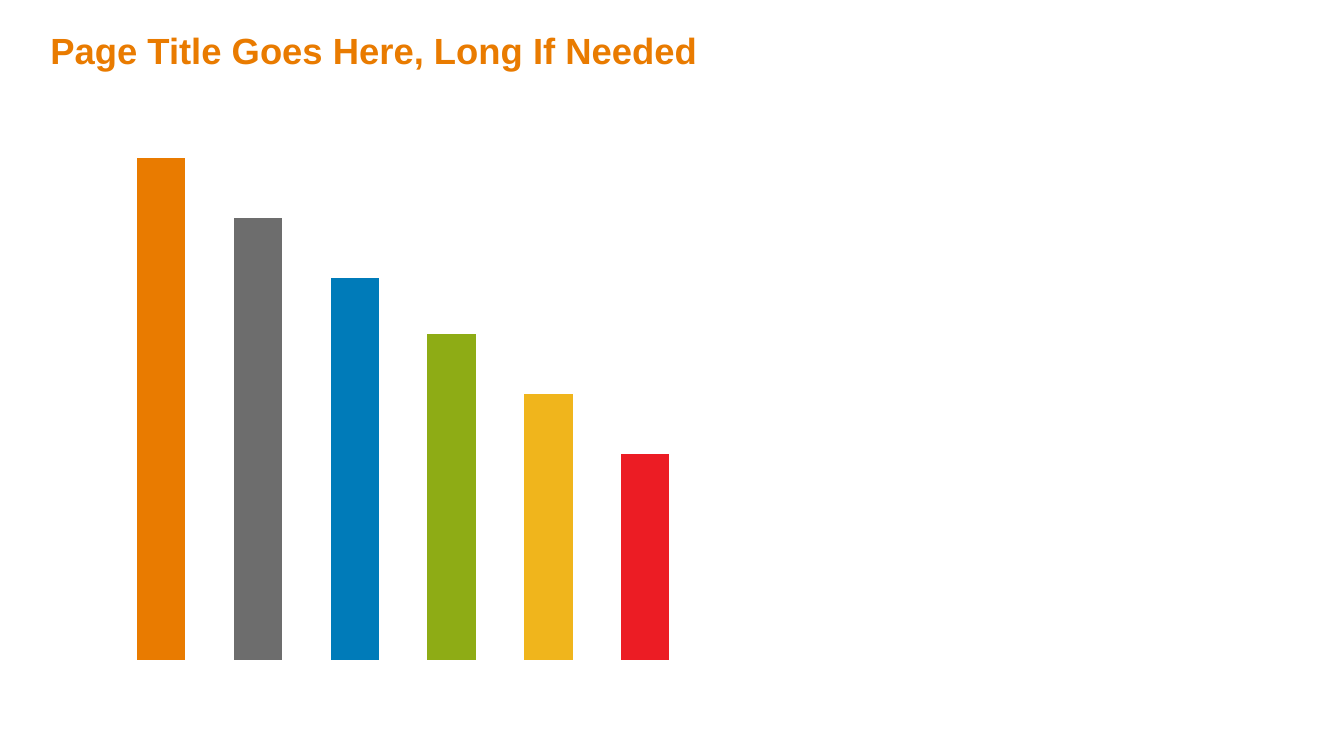
import pptx
import pptx.chart.data
import pptx.dml.color
import pptx.enum.chart
import pptx.enum.text
import pptx.oxml
import pptx.oxml.ns
import pptx.util

Inches = pptx.util.Inches
FONT = "Arial"
ORANGE = "E97B00"
SERIES = [
    (100, ORANGE),
    (88, "6D6D6D"),
    (76, "007BB9"),
    (65, "8EAC15"),
    (53, "F0B51C"),
    (41, "EC1C24"),
]


def color(value):
    """Return the colour for a hex string."""
    return pptx.dml.color.RGBColor.from_string(value)


def format_text(paragraph, text, size, fill, bold=False, line_spacing=None):
    """Write formatted text into a paragraph."""
    paragraph.text = text
    paragraph.font.name = FONT
    paragraph.font.size = pptx.util.Pt(size)
    paragraph.font.bold = bold
    paragraph.font.color.rgb = color(fill)
    if line_spacing:
        paragraph.line_spacing = pptx.util.Pt(line_spacing)


def add_title(slide, left, top, width, height):
    """Place the page title, centred vertically in its box."""
    shape = slide.shapes.add_textbox(Inches(left), Inches(top), Inches(width), Inches(height))
    frame = shape.text_frame
    frame.word_wrap = True
    frame.vertical_anchor = pptx.enum.text.MSO_ANCHOR.MIDDLE
    frame.margin_left = frame.margin_right = frame.margin_top = frame.margin_bottom = 0
    format_text(frame.paragraphs[0], "Page Title Goes Here, Long If Needed",
                size=26, fill=ORANGE, bold=True, line_spacing=31)


def set_plot_layout(chart, x, y, w, h):
    """Fix the inner plot area as fractions of the chart box."""
    plot_area = chart.plots[0]._element.getparent()
    for layout in plot_area.findall(pptx.oxml.ns.qn("c:layout")):
        plot_area.remove(layout)
    sizes = "".join(f'<c:{name} val="{value}"/>' for name, value in zip("xywh", (x, y, w, h)))
    plot_area.insert(0, pptx.oxml.parse_xml(
        f'<c:layout {pptx.oxml.ns.nsdecls("c")}><c:manualLayout><c:layoutTarget val="inner"/>'
        f'<c:xMode val="edge"/><c:yMode val="edge"/>{sizes}</c:manualLayout></c:layout>'))


def add_column_chart(slide, left, top, width, height):
    """Place the column chart with one coloured column per series."""
    data = pptx.chart.data.CategoryChartData()
    data.categories = ["1"]
    for number, (value, _) in enumerate(SERIES, start=1):
        data.add_series(f"Series {number}", [value])
    chart = slide.shapes.add_chart(
        pptx.enum.chart.XL_CHART_TYPE.COLUMN_CLUSTERED,
        Inches(left), Inches(top), Inches(width), Inches(height), data).chart
    chart.has_title = False
    chart.has_legend = False
    chart.font.name = FONT
    chart.font.size = pptx.util.Pt(10)
    chart.font.color.rgb = color("000000")
    chart.category_axis.visible = False
    chart.value_axis.visible = False
    chart.value_axis.has_major_gridlines = False
    chart.value_axis.minimum_scale = 0
    chart.value_axis.maximum_scale = 100
    plot = chart.plots[0]
    plot.vary_by_categories = False
    plot.gap_width = 300
    plot.overlap = -100
    for series, (_, fill) in zip(plot.series, SERIES):
        series.format.fill.solid()
        series.format.fill.fore_color.rgb = color(fill)
        series.format.line.fill.background()
    set_plot_layout(chart, x=0.02, y=0.074, w=0.96, h=0.906)


def main():
    """Build and save the presentation."""
    presentation = pptx.Presentation()
    presentation.slide_width = Inches(13.33)
    presentation.slide_height = Inches(7.5)
    slide = presentation.slides.add_slide(presentation.slide_layouts[6])
    add_title(slide, 0.5, 0, 11, 1)
    add_column_chart(slide, 0.5, 1.16, 7, 5.5)
    presentation.save("out.pptx")


if __name__ == "__main__":
    main()
